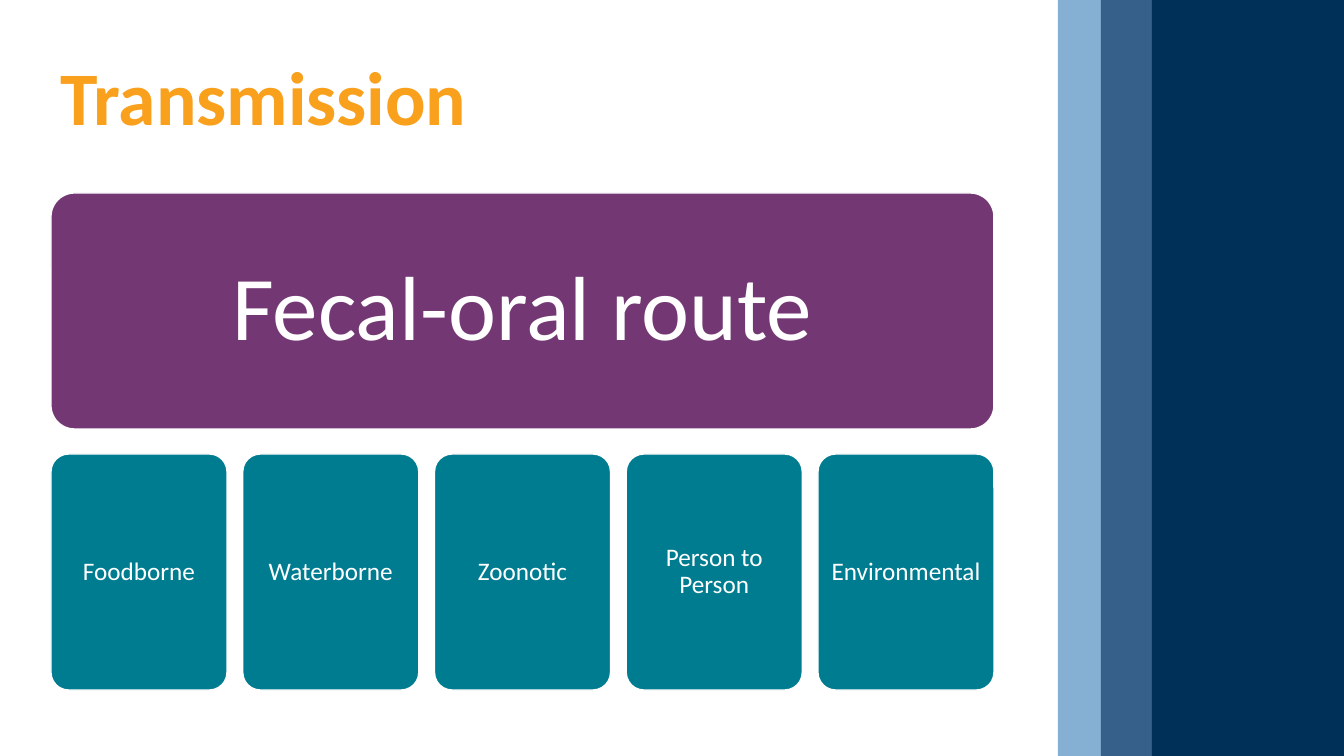
from dataclasses import dataclass

from pptx import Presentation
from pptx.dml.color import RGBColor
from pptx.enum.shapes import MSO_SHAPE as Shape
from pptx.enum.text import MSO_ANCHOR as Anchor, PP_ALIGN as Align
from pptx.util import Emu, Pt


@dataclass(frozen=True)
class Theme:
    font: str = "Calibri"
    title: str = "F9A01D"
    route: str = "733873"
    mode: str = "007C90"
    white: str = "FFFFFF"
    bands: tuple = ("86B0D3", "36608A", "003057")
    title_size: int = 54
    route_size: int = 65
    mode_size: int = 18


THEME = Theme()
PAGE_W, PAGE_H = 1344, 756
EMU_PER_PX = 12192000 / PAGE_W


def px(length):
    return Emu(round(length * EMU_PER_PX))


def add_card(page, left, top, width, height, text, fill, size, inset):
    """Add a rounded, white-edged box with centred white text."""
    card = page.shapes.add_shape(
        Shape.ROUNDED_RECTANGLE, px(left), px(top), px(width), px(height))
    card.adjustments[0] = 0.1
    card.shadow.inherit = False
    card.fill.solid()
    card.fill.fore_color.rgb = RGBColor.from_string(fill)
    card.line.color.rgb = RGBColor.from_string(THEME.white)
    card.line.width = Pt(1)
    frame = card.text_frame
    frame.word_wrap = True
    frame.vertical_anchor = Anchor.MIDDLE
    frame.margin_left = frame.margin_right = px(inset)
    frame.margin_top = frame.margin_bottom = px(inset)
    para = frame.paragraphs[0]
    para.text = text
    para.alignment = Align.CENTER
    para.line_spacing = 0.9
    para.font.name = THEME.font
    para.font.size = Pt(size)
    para.font.color.rgb = RGBColor.from_string(THEME.white)


deck = Presentation()
deck.slide_width, deck.slide_height = px(PAGE_W), px(PAGE_H)
page = deck.slides.add_slide(deck.slide_layouts.get_by_name("Title Only"))

# Side bands, each running to the right edge
for left, color in zip((1058, 1101, 1152), THEME.bands):
    band = page.shapes.add_shape(
        Shape.RECTANGLE, px(left), 0, px(PAGE_W - left), px(PAGE_H))
    band.shadow.inherit = False
    band.fill.solid()
    band.fill.fore_color.rgb = RGBColor.from_string(color)
    band.line.fill.background()

# Title
title = page.shapes.title
title.left, title.top, title.width, title.height = map(px, (50, 52, 984, 98))
title.text_frame.vertical_anchor = Anchor.MIDDLE
para = title.text_frame.paragraphs[0]
para.text = "Transmission"
para.alignment = Align.LEFT
para.line_spacing = 0.9
para.font.name = THEME.font
para.font.size = Pt(THEME.title_size)
para.font.bold = True
para.font.color.rgb = RGBColor.from_string(THEME.title)

# Route above its modes, both rows sharing the same left and right edges
ROW_LEFT, ROW_W, CARD_H = 51, 943, 236
ROUTE_TOP, MODE_TOP, MODE_W = 193, 454, 176
modes = ("Foodborne", "Waterborne", "Zoonotic", "Person to Person",
         "Environmental")
pitch = (ROW_W - MODE_W) / (len(modes) - 1)

add_card(page, ROW_LEFT, ROUTE_TOP, ROW_W, CARD_H, "Fecal-oral route",
         THEME.route, THEME.route_size, inset=27)
for index, mode in enumerate(modes):
    add_card(page, ROW_LEFT + index * pitch, MODE_TOP, MODE_W, CARD_H, mode,
             THEME.mode, THEME.mode_size, inset=7)

deck.save("out.pptx")
